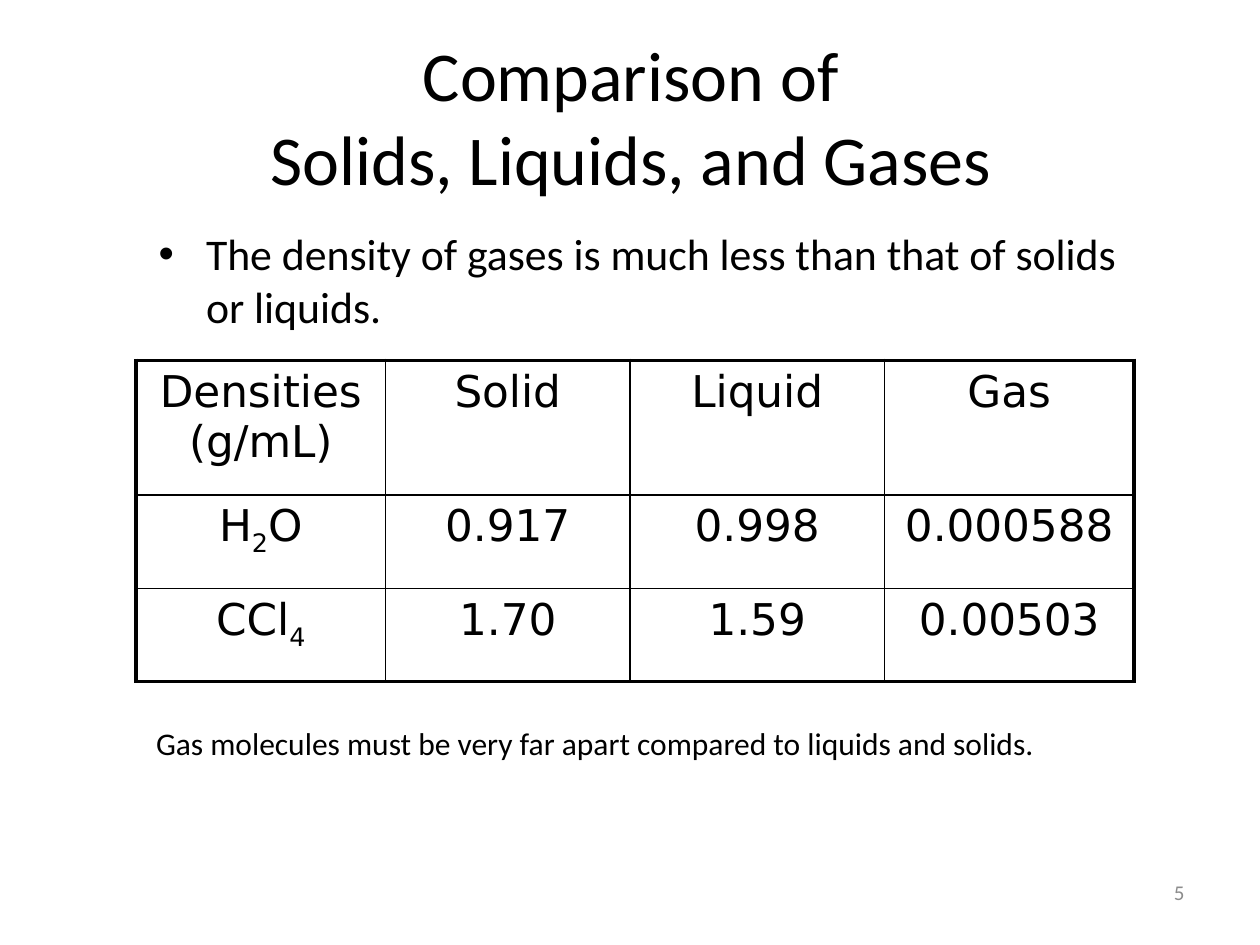
from lxml import etree
from pptx import Presentation
from pptx.dml.color import RGBColor
from pptx.enum.text import MSO_ANCHOR, PP_ALIGN
from pptx.oxml.ns import qn
from pptx.util import Inches, Pt

COLORS = {"text": "000000", "border": "000000", "number": "8C8C8C"}
THICK, THIN = 2.25, 1

deck = Presentation()
deck.slide_width, deck.slide_height = Inches(10), Inches(7.5)
slide = deck.slides.add_slide(deck.slide_layouts[1])


def place(shape, left, top, width, height):
    shape.left, shape.top = Inches(left), Inches(top)
    shape.width, shape.height = Inches(width), Inches(height)


def format_text(frame, size, font="Calibri", color="text", align=PP_ALIGN.LEFT):
    frame.word_wrap = True
    for paragraph in frame.paragraphs:
        paragraph.alignment = align
        paragraph.space_before = Pt(0)
        for run in paragraph.runs:
            for name, value in {"size": Pt(size), "name": font}.items():
                setattr(run.font, name, value)
            run.font.color.rgb = RGBColor.from_string(COLORS[color])


heading = slide.shapes.title
place(heading, 0.62, 0.29, 8.77, 1.25)
heading.text_frame.text = "Comparison of\vSolids, Liquids, and Gases"
format_text(heading.text_frame, 40, align=PP_ALIGN.CENTER)

density_point = slide.placeholders[1]
place(density_point, 1.16, 1.75, 8.17, 1.42)
density_point.text_frame.text = (
    "The density of gases is much less than that of solids or liquids.")
format_text(density_point.text_frame, 25)

# Each cell is a list of runs; every second run is a subscript.
densities = [
    [["Densities (g/mL)"], ["Solid"], ["Liquid"], ["Gas"]],
    [["H", "2", "O"], ["0.917"], ["0.998"], ["0.000588"]],
    [["CCl", "4"], ["1.70"], ["1.59"], ["0.00503"]],
]
column_widths = [1.98, 1.94, 2.02, 1.98]
row_heights = [1.07, 0.74, 0.74]
table = slide.shapes.add_table(
    len(row_heights), len(column_widths), Inches(1.08), Inches(2.86),
    Inches(sum(column_widths)), Inches(sum(row_heights))).table
table.first_row = table.horz_banding = False
for column, width in zip(table.columns, column_widths):
    column.width = Inches(width)
for row, height in zip(table.rows, row_heights):
    row.height = Inches(height)

for r, substances in enumerate(densities):
    for c, parts in enumerate(substances):
        cell = table.cell(r, c)
        paragraph = cell.text_frame.paragraphs[0]
        for i, part in enumerate(parts):
            run = paragraph.add_run()
            run.text = part
            if i % 2:
                run._r.get_or_add_rPr().set("baseline", "-25000")
        format_text(cell.text_frame, 25, "DejaVu Sans", align=PP_ALIGN.CENTER)
        outer_sides = {
            "lnL": c == 0,
            "lnR": c == len(column_widths) - 1,
            "lnT": r == 0,
            "lnB": r == len(row_heights) - 1,
        }
        properties = cell._tc.get_or_add_tcPr()
        for side, is_outer in outer_sides.items():
            line = etree.SubElement(properties, qn(f"a:{side}"),
                                    w=str(Pt(THICK if is_outer else THIN)))
            solid = etree.SubElement(line, qn("a:solidFill"))
            etree.SubElement(solid, qn("a:srgbClr"), val=COLORS["border"])
        cell.fill.background()

conclusion = slide.shapes.add_textbox(0, 0, 0, 0)
place(conclusion, 1.14, 5.7, 8.1, 1.04)
conclusion.text_frame.text = (
    "Gas molecules must be very far apart compared to liquids and solids.")
format_text(conclusion.text_frame, 18)

page_number = slide.shapes.add_textbox(0, 0, 0, 0)
place(page_number, 7.17, 6.83, 2.33, 0.5)
page_number.text_frame.text = "5"
page_number.text_frame.vertical_anchor = MSO_ANCHOR.MIDDLE
format_text(page_number.text_frame, 12, color="number", align=PP_ALIGN.RIGHT)

deck.save("out.pptx")
